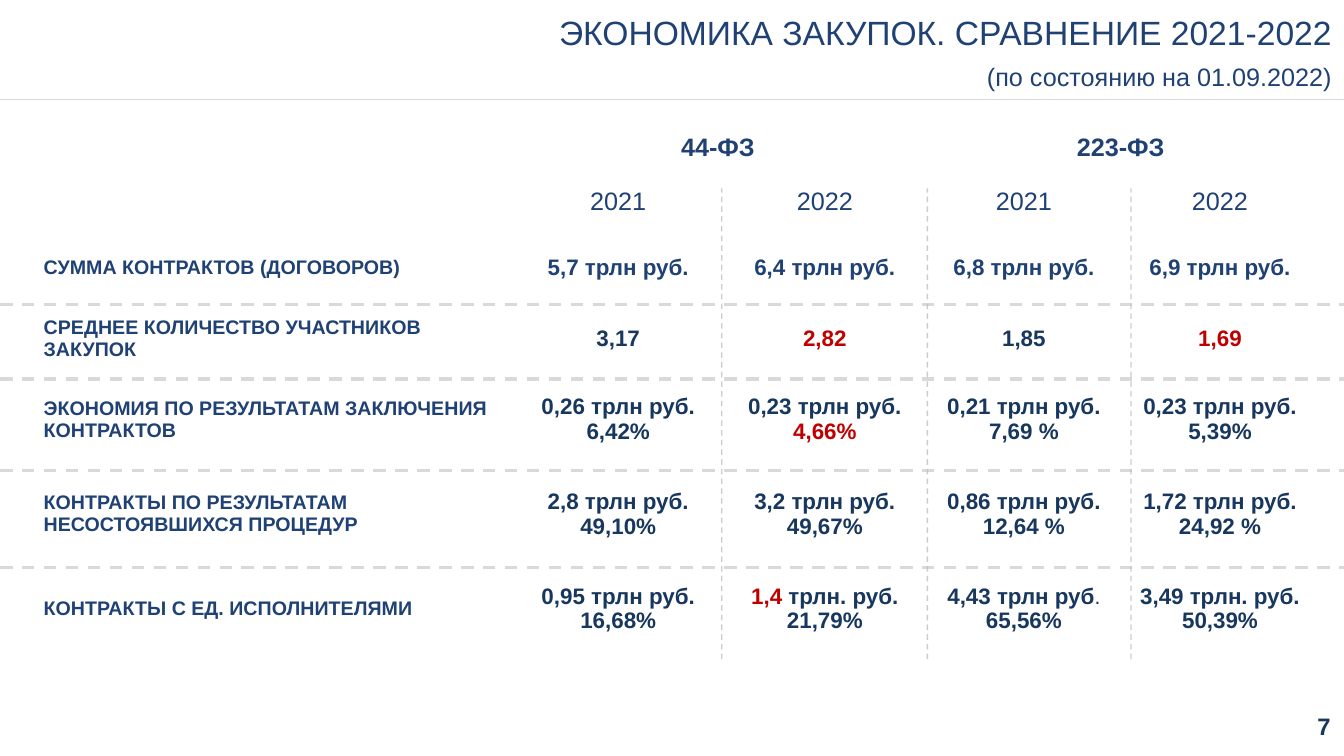
from lxml.etree import SubElement
from pptx import Presentation
from pptx.dml.color import RGBColor
from pptx.enum.dml import MSO_LINE
from pptx.enum.shapes import MSO_CONNECTOR
from pptx.enum.text import MSO_ANCHOR, PP_ALIGN
from pptx.oxml.ns import qn
from pptx.util import Inches, Pt

BLUE, NAVY, RED = "1F4174", "17375E", "C00000"
PALE, GREY = "D9D9D9", "BFBFBF"
LEFT, MID, RIGHT = PP_ALIGN.LEFT, PP_ALIGN.CENTER, PP_ALIGN.RIGHT


def tint(code):
    return RGBColor.from_string(code)


class Page:
    """Places are in percent of the slide's width and height."""

    base = {"name": "Arial", "size": 16, "bold": True, "color": NAVY}

    def __init__(self, deck):
        self.wide, self.high = deck.slide_width, deck.slide_height
        self.shapes = deck.slides.add_slide(deck.slide_layouts[6]).shapes

    def x(self, share):
        return round(self.wide * share / 100)

    def y(self, share):
        return round(self.high * share / 100)

    def label(self, para, runs, align, look):
        """Each run is a string or a pair of string and own format."""
        para.alignment = align
        for part in runs:
            text, own = (part, {}) if isinstance(part, str) else part
            run = para.add_run()
            run.text = text
            form = {**self.base, **look, **own}
            run.font.color.rgb = tint(form.pop("color"))
            form["size"] = Pt(form["size"])
            for key, value in form.items():
                setattr(run.font, key, value)

    def fill(self, frame, lines, align, look):
        for i, runs in enumerate(lines):
            para = frame.add_paragraph() if i else frame.paragraphs[0]
            self.label(para, runs, align, look)

    def text(self, x, y, w, h, lines, **look):
        box = self.shapes.add_textbox(self.x(x), self.y(y), self.x(w), self.y(h))
        frame = box.text_frame
        frame.word_wrap = True
        for side in ("left", "top", "right", "bottom"):
            setattr(frame, "margin_" + side, 0)
        self.fill(frame, lines, RIGHT, look)
        return frame

    def line(self, x1, y1, x2, y2, color, width, dash=True, alpha=None):
        link = self.shapes.add_connector(
            MSO_CONNECTOR.STRAIGHT, self.x(x1), self.y(y1), self.x(x2), self.y(y2))
        link.line.color.rgb = tint(color)
        link.line.width = Pt(width)
        if dash:
            link.line.dash_style = MSO_LINE.DASH
        props = link._element.spPr
        if alpha:
            shade = next(props.iter(qn("a:srgbClr")))
            SubElement(shade, qn("a:alpha")).set("val", str(alpha * 1000))
        SubElement(props, qn("a:effectLst"))

    def table(self, x, y, cols, rows, data, style):
        """Style gives the alignment and format of a cell by row and column."""
        grid = self.shapes.add_table(
            len(rows), len(cols), self.x(x), self.y(y),
            self.x(sum(cols)), self.y(sum(rows))).table
        grid.first_row = grid.horz_banding = False
        for col, share in zip(grid.columns, cols):
            col.width = self.x(share)
        for row, share in zip(grid.rows, rows):
            row.height = self.y(share)
        for r, line in enumerate(data):
            for c, lines in enumerate(line):
                cell = grid.cell(r, c)
                cell.fill.background()
                cell.vertical_anchor = MSO_ANCHOR.MIDDLE
                align, look = style(r, c)
                self.fill(cell.text_frame, lines, align, look)
        return grid


def red(text):
    return text, {"color": RED}


def one(text):
    return [[text]]


def two(top, low):
    return [[top], [low]]


COLS = [35.55, 15.9, 14.85, 14.78, 14.4]
HEAD = [
    [[], one("44-ФЗ"), [], one("223-ФЗ"), []],
    [[], one("2021"), one("2022"), one("2021"), one("2022")],
]
BODY = [
    [one("СУММА КОНТРАКТОВ (ДОГОВОРОВ)"), one("5,7 трлн руб."),
     one("6,4 трлн руб."), one("6,8 трлн руб."), one("6,9 трлн руб.")],
    [one("СРЕДНЕЕ КОЛИЧЕСТВО УЧАСТНИКОВ ЗАКУПОК"), one("3,17"),
     one(red("2,82")), one("1,85"), one(red("1,69"))],
    [one("ЭКОНОМИЯ ПО РЕЗУЛЬТАТАМ ЗАКЛЮЧЕНИЯ КОНТРАКТОВ"),
     two("0,26 трлн руб.", "6,42%"), two("0,23 трлн руб.", red("4,66%")),
     two("0,21 трлн руб.", "7,69 %"), two("0,23 трлн руб.", "5,39%")],
    [one("КОНТРАКТЫ ПО РЕЗУЛЬТАТАМ НЕСОСТОЯВШИХСЯ ПРОЦЕДУР"),
     two("2,8 трлн руб.", "49,10%"), two("3,2 трлн руб.", "49,67%"),
     two("0,86 трлн руб.", "12,64 %"), two("1,72 трлн руб.", "24,92 %")],
    [one("КОНТРАКТЫ С ЕД. ИСПОЛНИТЕЛЯМИ"),
     two("0,95 трлн руб.", "16,68%"),
     [[red("1,4 "), "трлн. руб."], ["21,79%"]],
     [["4,43 трлн руб", (".", {"size": 15, "bold": False})], ["65,56%"]],
     two("3,49 трлн. руб.", "50,39%")],
]


def head_style(r, c):
    return MID, {"size": 18, "color": BLUE, "bold": r == 0}


def body_style(r, c):
    if c == 0:
        return LEFT, {"size": 14, "color": BLUE}
    return MID, {"color": NAVY if r else BLUE}


def main():
    deck = Presentation()
    deck.slide_width, deck.slide_height = Inches(13.33), Inches(7.5)
    page = Page(deck)

    # Title and the rule under it
    page.line(0, 13.2, 100, 13.2, PALE, 1, dash=False)
    title = page.text(
        25.9, 1.6, 73.2, 10.8,
        [["ЭКОНОМИКА ЗАКУПОК. СРАВНЕНИЕ 2021-2022"],
         [("(по состоянию на 01.09.2022)", {"size": 18})]],
        size=24, bold=False, color=BLUE)
    title.paragraphs[1].space_before = Pt(6)

    # Figures and their column heads
    page.table(2.5, 30.8, COLS, [9.33, 9.33, 12, 13.07, 12], BODY, body_style)
    head = page.table(2.5, 16, COLS, [7.17, 7.17], HEAD, head_style)
    for c in (1, 3):
        head.cell(0, c).merge(head.cell(0, c + 1))

    # Page number
    page.text(95.9, 94.1, 3.1, 3.9, one("7"), size=17)

    # Dashed lines between rows and columns
    for y in (40.27, 50.13, 62.27, 75.07):
        page.line(0, y, 100, y, PALE, 2.25)
    for x in (53.7, 69, 84.15):
        page.line(x, 87.2, x, 24.93, GREY, 1, alpha=79)

    deck.save("out.pptx")


if __name__ == "__main__":
    main()
